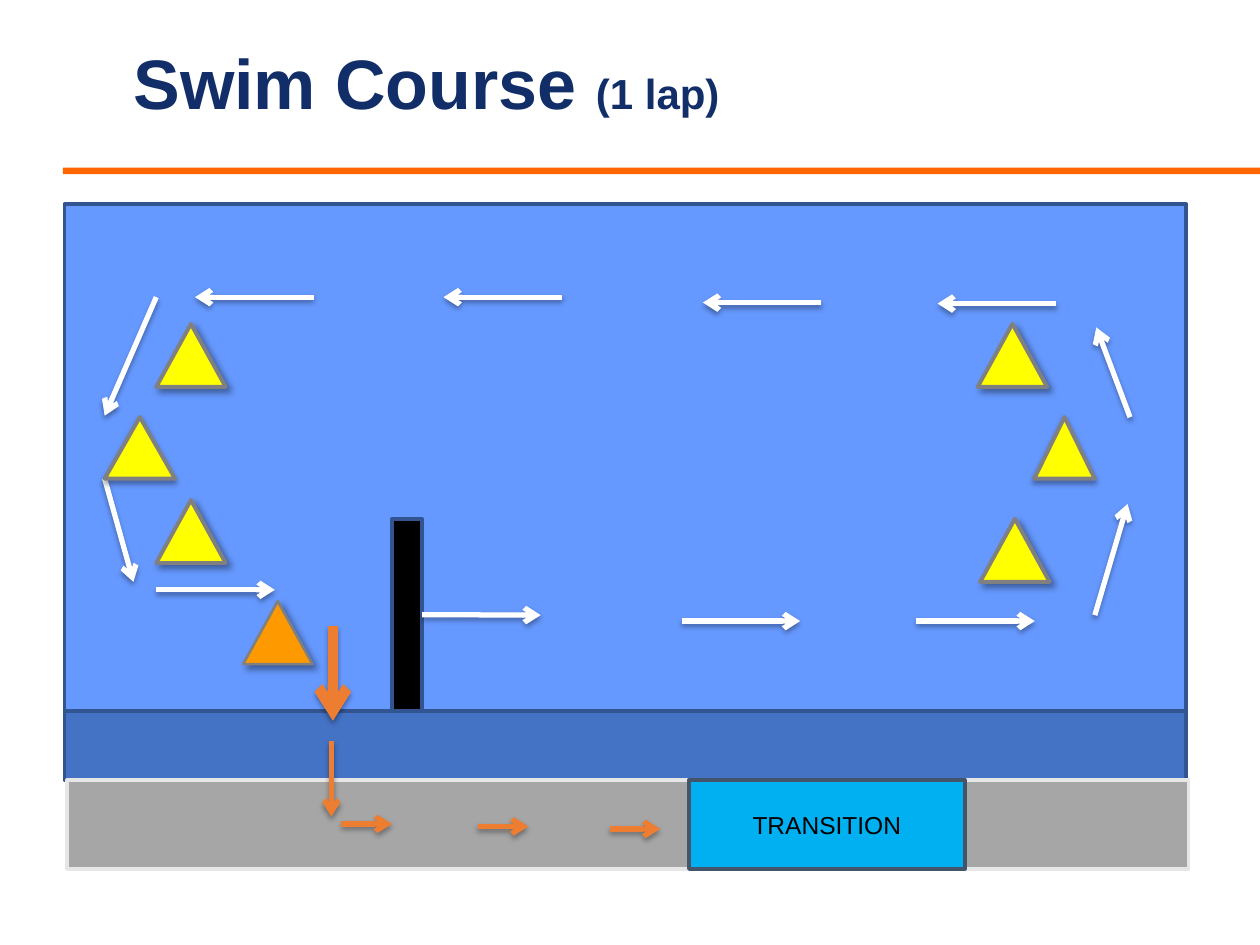
from typing import NamedTuple, Optional

from lxml import etree
from pptx import Presentation
from pptx.dml.color import RGBColor
from pptx.enum import shapes, text
from pptx.oxml.ns import qn
from pptx.util import Cm, Pt

COLORS = {
    "navy": "112E68", "rule": "FF6600", "water": "6699FF", "shore": "4472C4",
    "edge": "325491", "road": "A6A6A6", "curb": "E7E6E6", "black": "000000",
    "transition": "00B0F0", "slate": "44546A", "yellow": "FFFF00",
    "amber": "FF9900", "gray": "808080", "white": "FFFFFF", "orange": "ED7D31",
}
RECTANGLE = shapes.MSO_SHAPE.RECTANGLE
TRIANGLE = shapes.MSO_SHAPE.ISOSCELES_TRIANGLE
SWIM_LENGTH, RUN_LENGTH = 2.39, 1.02


class Shadow(NamedTuple):
    opacity: int
    blur: float
    distance: float
    angle: int


DIAGONAL = Shadow(40, 4, 3, 45)
BELOW = Shadow(35, 3.1, 1.8, 90)


class Area(NamedTuple):
    left: float
    top: float
    width: float
    height: float
    fill: str
    line: Optional[str] = None
    line_width: float = 2
    shadow: Optional[Shadow] = None


class Arrow(NamedTuple):
    x1: float
    y1: float
    x2: float
    y2: float
    color: str = "white"
    width: float = 3


def rgb(name: str) -> RGBColor:
    return RGBColor.from_string(COLORS[name])


def add_shadow(properties, shadow: Shadow) -> None:
    effects = etree.SubElement(properties, qn("a:effectLst"))
    outer = etree.SubElement(
        effects, qn("a:outerShdw"), blurRad=str(Pt(shadow.blur)),
        dist=str(Pt(shadow.distance)), dir=str(shadow.angle * 60000), rotWithShape="0")
    color = etree.SubElement(outer, qn("a:srgbClr"), val=COLORS["black"])
    etree.SubElement(color, qn("a:alpha"), val=str(shadow.opacity * 1000))


def draw_area(page, area: Area, kind=RECTANGLE):
    shape = page.shapes.add_shape(kind, *(Cm(length) for length in area[:4]))
    shape.fill.solid()
    shape.fill.fore_color.rgb = rgb(area.fill)
    if area.line:
        shape.line.color.rgb = rgb(area.line)
        shape.line.width = Pt(area.line_width)
    else:
        shape.line.fill.background()
    if area.shadow:
        add_shadow(shape._element.spPr, area.shadow)
    else:
        shape.shadow.inherit = False
    return shape


def draw_arrow(page, arrow: Arrow):
    connector = page.shapes.add_connector(
        shapes.MSO_CONNECTOR.STRAIGHT, *(Cm(length) for length in arrow[:4]))
    connector.line.color.rgb = rgb(arrow.color)
    connector.line.width = Pt(arrow.width)
    etree.SubElement(connector.line._get_or_add_ln(), qn("a:tailEnd"), type="arrow")
    add_shadow(connector._element.spPr, BELOW)
    return connector


def swim_arrow(x: float, y: float, direction: int = 1) -> Arrow:
    return Arrow(x, y, x + direction * SWIM_LENGTH, y)


def run_arrow(x: float, y: float) -> Arrow:
    return Arrow(x, y, x + RUN_LENGTH, y, "orange")


def buoy(left: float, top: float, width: float = 1.4, height: float = 1.27,
         fill: str = "yellow", line_width: float = 2.25, shadow: Shadow = DIAGONAL) -> Area:
    return Area(left, top, width, height, fill, "gray", line_width, shadow)


RULE = Area(1.27, 3.38, 24.13, 0.13, "rule")
SHORE = Area(1.3, 14.33, 22.61, 1.4, "shore", "edge")
ROAD = Area(1.35, 15.72, 22.61, 1.8, "road", "curb")
WATER = Area(1.3, 4.11, 22.61, 10.21, "water", "edge")
PIER = Area(7.9, 10.46, 0.61, 3.86, "black", "edge")
TRANSITION = Area(13.89, 15.72, 5.56, 1.8, "transition", "slate")

START = swim_arrow(8.51, 12.4)
ARROWS = [
    swim_arrow(13.74, 12.52), swim_arrow(18.47, 12.52),
    Arrow(22.07, 12.4, 22.73, 10.16), Arrow(22.78, 8.41, 22.1, 6.6),
    swim_arrow(21.29, 6.12, -1), swim_arrow(16.56, 6.1, -1),
    swim_arrow(11.33, 5.99, -1), swim_arrow(6.32, 5.99, -1),
    Arrow(3.15, 5.99, 2.11, 8.38), Arrow(2.11, 9.65, 2.69, 11.73),
    swim_arrow(3.15, 11.89),
    Arrow(6.71, 12.62, 6.71, 14.53, "orange", 6),
    Arrow(6.68, 14.94, 6.68, 16.46, "orange"),
    run_arrow(6.88, 16.61), run_arrow(9.63, 16.66), run_arrow(12.29, 16.71),
]
BUOYS = [
    buoy(19.71, 6.53), buoy(19.76, 10.46), buoy(3.15, 6.53), buoy(3.15, 10.08),
    buoy(20.85, 8.41, 1.22, 1.24, shadow=BELOW),
    buoy(2.11, 8.41, 1.42, 1.24, shadow=BELOW),
    buoy(4.9, 12.12, fill="amber", line_width=1.5),
]


def write_title(page) -> None:
    title = page.shapes.title
    title.left, title.top, title.width, title.height = Cm(2.69), Cm(0.71), Cm(22.1), Cm(2.01)
    frame = title.text_frame
    frame.auto_size = text.MSO_AUTO_SIZE.NONE
    frame.vertical_anchor = text.MSO_ANCHOR.MIDDLE
    frame.margin_left = frame.margin_top = 0
    para = frame.paragraphs[0]
    para.alignment = text.PP_ALIGN.LEFT
    para.font.name, para.font.bold = "Arial", True
    para.font.color.rgb = rgb("navy")
    for words, size in (("Swim Course ", 40), ("(1 lap)", 24)):
        span = para.add_run()
        span.text = words
        span.font.size = Pt(size)


def write_label(box, words: str) -> None:
    frame = box.text_frame
    frame.vertical_anchor = text.MSO_ANCHOR.MIDDLE
    para = frame.paragraphs[0]
    para.text = words
    para.alignment = text.PP_ALIGN.CENTER
    para.font.name, para.font.size = "Arial", Pt(14)
    para.font.color.rgb = rgb("black")


def main() -> None:
    deck = Presentation()
    deck.slide_width, deck.slide_height = Cm(25.4), Cm(19.05)
    page = deck.slides.add_slide(deck.slide_layouts[5])
    write_title(page)
    for area in (RULE, SHORE, ROAD, WATER):
        draw_area(page, area)
    pier = draw_area(page, PIER)
    draw_arrow(page, START).begin_connect(pier, 3)
    for arrow in ARROWS:
        draw_arrow(page, arrow)
    write_label(draw_area(page, TRANSITION), "TRANSITION")
    for marker in BUOYS:
        draw_area(page, marker, TRIANGLE)
    deck.save("out.pptx")


if __name__ == "__main__":
    main()
